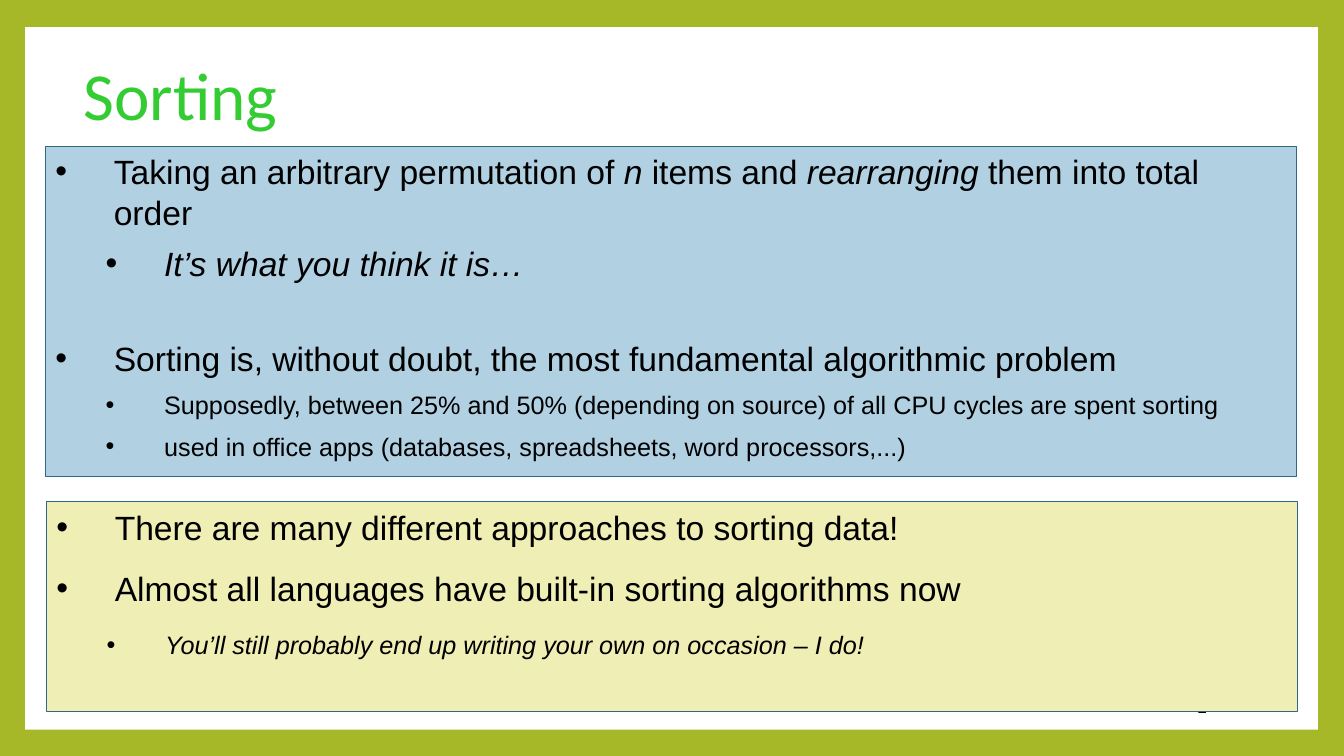
import pptx
import pptx.util
import pptx.dml.color
import pptx.enum.shapes
import pptx.enum.text
import pptx.oxml.ns
import lxml.etree

Inches = pptx.util.Inches
Pt = pptx.util.Pt
RGBColor = pptx.dml.color.RGBColor
Align = pptx.enum.text.PP_ALIGN
Anchor = pptx.enum.text.MSO_ANCHOR

OLIVE = RGBColor(0xA6, 0xB7, 0x27)
WHITE = RGBColor(0xFF, 0xFF, 0xFF)
GREEN = RGBColor(0x33, 0xCC, 0x33)
BLACK = RGBColor(0, 0, 0)
BLUE = RGBColor(0xB1, 0xD1, 0xE3)
YELLOW = RGBColor(0xEF, 0xEE, 0xB5)
TEAL = RGBColor(0x31, 0x68, 0x86)

HANGING = 0.58
LEVEL_STEP = 0.5

# Each point: level, size, space before, runs of (text, italic)
DEFINITION = [
    (0, 24, 15, [("Taking an arbitrary permutation of ", False), ("n", True),
                 (" items and ", False), ("rearranging", True),
                 (" them into total order", False)]),
    (1, 24, 8, [("It’s what you think it is…", True)]),
    (0, 24, 39, [("Sorting is, without doubt, the most fundamental algorithmic problem", False)]),
    (1, 18, 8, [("Supposedly, between 25% and 50% (depending on source) of all CPU cycles are spent sorting", False)]),
    (1, 18, 8, [("used in office apps (databases, spreadsheets, word processors,...)", False)]),
]
APPROACHES = [
    (0, 24, 15, [("There are many different approaches to sorting data!", False)]),
    (0, 24, 15, [("Almost all languages have built-in sorting algorithms now", False)]),
    (1, 18, 15, [("You’ll still probably end up writing your own on occasion – I do!", True)]),
]
PANELS = [
    ((0.45, 1.45, 12.41, 3.28), BLUE, DEFINITION),
    ((0.46, 4.98, 12.41, 2.08), YELLOW, APPROACHES),
]


def add_text(paragraph, text, size=24, font="Arial", color=BLACK, italic=False):
    run = paragraph.add_run()
    run.text = text
    run.font.size = Pt(size)
    run.font.name = font
    run.font.color.rgb = color
    run.font.italic = italic


def add_rectangle(slide, place, fill, outline=None):
    rectangle = slide.shapes.add_shape(
        pptx.enum.shapes.MSO_SHAPE.RECTANGLE, *map(Inches, place))
    rectangle.shadow.inherit = False
    rectangle.fill.solid()
    rectangle.fill.fore_color.rgb = fill
    if outline is None:
        rectangle.line.fill.background()
    else:
        rectangle.line.color.rgb = outline
        rectangle.line.width = Pt(0.75)
    return rectangle


def add_label(slide, place, text, align, **text_format):
    frame = slide.shapes.add_textbox(*map(Inches, place)).text_frame
    frame.word_wrap = True
    frame.vertical_anchor = Anchor.MIDDLE
    paragraph = frame.paragraphs[0]
    paragraph.alignment = align
    add_text(paragraph, text, **text_format)
    return paragraph


def add_bullet(paragraph, level):
    properties = paragraph._p.get_or_add_pPr()
    properties.set("marL", str(Inches(HANGING + level * LEVEL_STEP)))
    properties.set("indent", str(-Inches(HANGING)))
    for tag, key, value in (("a:buFont", "typeface", "Arial"), ("a:buChar", "char", "•")):
        lxml.etree.SubElement(properties, pptx.oxml.ns.qn(tag)).set(key, value)


def add_panel(slide, place, fill, points):
    frame = add_rectangle(slide, place, fill, TEAL).text_frame
    frame.word_wrap = True
    frame.vertical_anchor = Anchor.TOP
    for index, (level, size, space, runs) in enumerate(points):
        paragraph = frame.add_paragraph() if index else frame.paragraphs[0]
        paragraph.alignment = Align.LEFT
        paragraph.level = level
        paragraph.space_before = Pt(space)
        add_bullet(paragraph, level)
        for text, italic in runs:
            add_text(paragraph, text, size=size, italic=italic)


def main():
    deck = pptx.Presentation()
    deck.slide_width = Inches(13.33)
    deck.slide_height = Inches(7.5)
    slide = deck.slides.add_slide(deck.slide_layouts[6])
    slide.background.fill.solid()
    slide.background.fill.fore_color.rgb = OLIVE

    add_rectangle(slide, (0.25, 0.27, 12.82, 6.97), WHITE)
    title = add_label(slide, (0.73, 0.51, 9, 0.93), "Sorting", Align.LEFT,
                      size=48, font="Calibri", color=GREEN)
    title.line_spacing = 0.9
    add_label(slide, (10.2, 6.81, 1.87, 0.4), "2", Align.RIGHT, size=12)
    for place, fill, points in PANELS:
        add_panel(slide, place, fill, points)
    deck.save("out.pptx")


if __name__ == "__main__":
    main()
